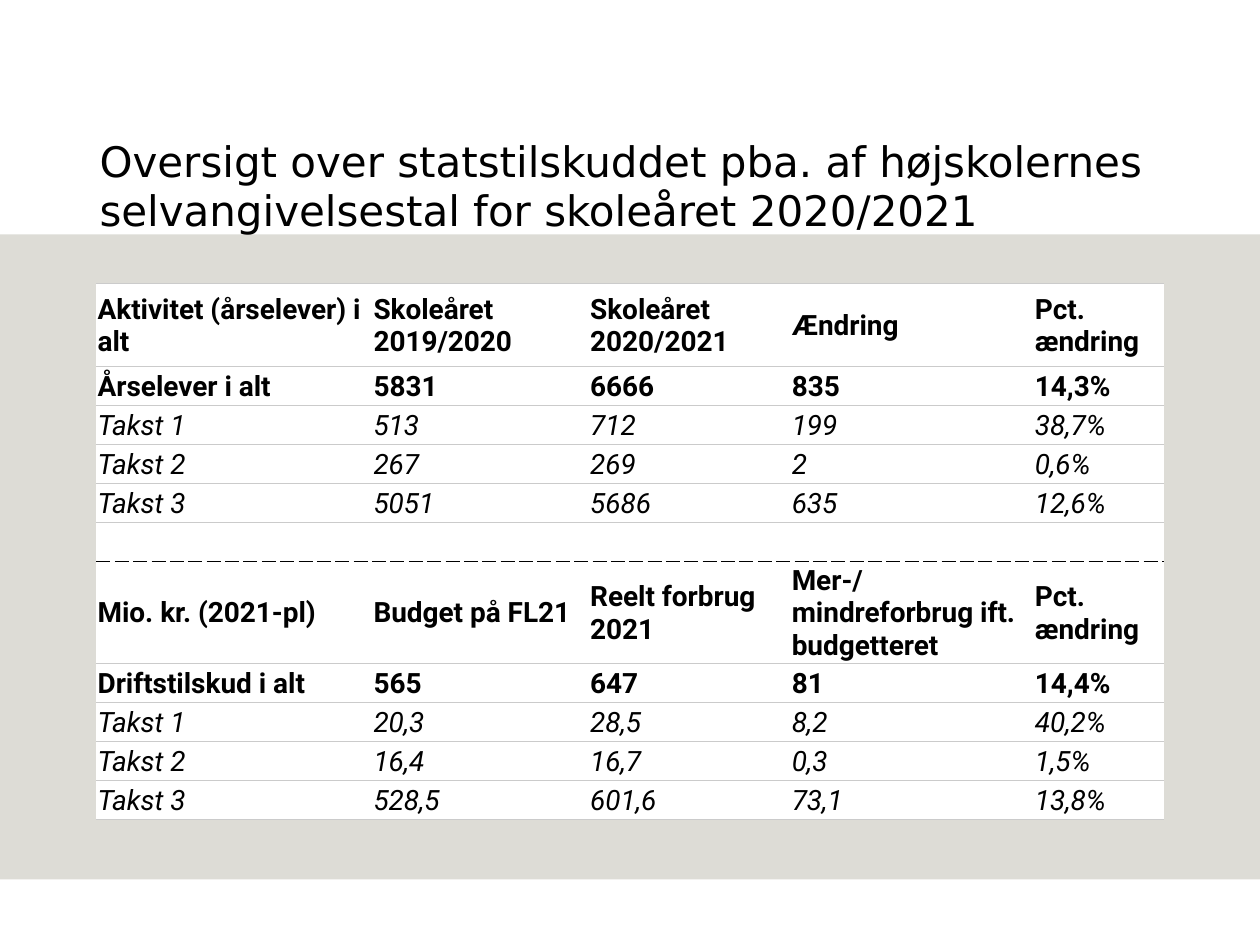
"""Build a slide with a table of state grants to folk high schools."""
from dataclasses import dataclass

from lxml import etree
from pptx import Presentation
from pptx import util as u
from pptx.dml.color import RGBColor
from pptx.enum import shapes, text
from pptx.oxml import ns

COLORS = {"ink": "000000", "paper": "FFFFFF", "band": "DDDCD6", "rule": "CBCBCB"}
WIDTH, HEIGHT = u.Inches(10), u.Inches(7.5)
COLUMN_PERCENTS = (21.9, 17.2, 16, 19.3, 10.3)
ROW_PERCENT = 4.13


@dataclass(frozen=True)
class Line:
    color: str
    points: float
    dash: str = "solid"


@dataclass(frozen=True)
class Row:
    labels: tuple[str, ...]
    bold: bool = False
    italic: bool = False
    percent: float = ROW_PERCENT
    top: Line = Line("rule", 0.5)
    bottom: Line = Line("rule", 0.5)


DIVIDER = Line("ink", 1, "sysDash")


def total(*labels: str) -> Row:
    return Row(labels, bold=True)


def rate(*labels: str) -> Row:
    return Row(labels, italic=True)


ROWS = (
    Row(("Aktivitet (årselever) i alt", "Skoleåret 2019/2020", "Skoleåret 2020/2021",
         "Ændring", "Pct. ændring"), bold=True, percent=8.8),
    total("Årselever i alt", "5831", "6666", "835", "14,3%"),
    rate("Takst 1", "513", "712", "199", "38,7%"),
    rate("Takst 2", "267", "269", "2", "0,6%"),
    rate("Takst 3", "5051", "5686", "635", "12,6%"),
    Row(("",) * len(COLUMN_PERCENTS), bottom=DIVIDER),
    Row(("Mio. kr. (2021-pl)", "Budget på FL21", "Reelt forbrug 2021",
         "Mer-/mindreforbrug ift. budgetteret", "Pct. ændring"),
        bold=True, percent=9.6, top=DIVIDER),
    total("Driftstilskud i alt", "565", "647", "81", "14,4%"),
    rate("Takst 1", "20,3", "28,5", "8,2", "40,2%"),
    rate("Takst 2", "16,4", "16,7", "0,3", "1,5%"),
    rate("Takst 3", "528,5", "601,6", "73,1", "13,8%"),
)


def across(percent: float) -> int:
    return round(WIDTH * percent / 100)


def down(percent: float) -> int:
    return round(HEIGHT * percent / 100)


def rgb(name: str) -> RGBColor:
    return RGBColor.from_string(COLORS[name])


def write(frame, content: str, *, font: str, size: float, bold: bool = False,
          italic: bool = False, spacing: float | None = None) -> None:
    frame.word_wrap = True
    para = frame.paragraphs[0]
    para.line_spacing = spacing
    para.font.size = u.Pt(size)
    if content:
        span = para.add_run()
        span.text = content
        span.font.name, span.font.size = font, u.Pt(size)
        span.font.bold, span.font.italic = bold, italic
        span.font.color.rgb = rgb("ink")


def add_border(properties, tag: str, line: Line) -> None:
    border = etree.SubElement(properties, ns.qn(f"a:{tag}"), w=str(u.Pt(line.points)))
    fill = etree.SubElement(border, ns.qn("a:solidFill"))
    etree.SubElement(fill, ns.qn("a:srgbClr"), val=COLORS[line.color])
    etree.SubElement(border, ns.qn("a:prstDash"), val=line.dash)


def format_cell(cell, label: str, row: Row) -> None:
    cell.margin_left = cell.margin_top = cell.margin_right = u.Inches(0.01)
    cell.margin_bottom = 0
    cell.vertical_anchor = text.MSO_ANCHOR.MIDDLE
    write(cell.text_frame, label, font="Roboto", size=16, bold=row.bold, italic=row.italic)
    properties = cell._tc.get_or_add_tcPr()
    for side in ("lnL", "lnR"):
        border = etree.SubElement(properties, ns.qn(f"a:{side}"), w="0")
        etree.SubElement(border, ns.qn("a:noFill"))
    add_border(properties, "lnT", row.top)
    add_border(properties, "lnB", row.bottom)
    cell.fill.solid()
    cell.fill.fore_color.rgb = rgb("paper")


def add_band(page) -> None:
    band = page.shapes.add_shape(shapes.MSO_SHAPE.RECTANGLE, 0, down(24.8), WIDTH, down(68.27))
    band.shadow.inherit = False
    band.fill.solid()
    band.fill.fore_color.rgb = rgb("band")
    band.line.fill.background()


def add_title(page, content: str) -> None:
    box = page.shapes.add_textbox(across(7.9), down(14.67), across(91.7), down(12.67))
    frame = box.text_frame
    frame.margin_left = frame.margin_top = frame.margin_right = frame.margin_bottom = 0
    write(frame, content, font="DejaVu Sans", size=24, spacing=0.97)


def add_grant_table(page, rows: tuple[Row, ...]) -> None:
    table = page.shapes.add_table(
        len(rows), len(COLUMN_PERCENTS), across(7.65), down(30),
        across(sum(COLUMN_PERCENTS)), down(sum(row.percent for row in rows))).table
    table.first_row = table.horz_banding = False
    for column, percent in zip(table.columns, COLUMN_PERCENTS):
        column.width = across(percent)
    for table_row, row in zip(table.rows, rows):
        table_row.height = down(row.percent)
        for cell, label in zip(table_row.cells, row.labels):
            format_cell(cell, label, row)


def main() -> None:
    deck = Presentation()
    deck.slide_width, deck.slide_height = WIDTH, HEIGHT
    page = deck.slides.add_slide(deck.slide_layouts[6])
    add_band(page)
    add_title(page, "Oversigt over statstilskuddet pba. af højskolernes "
                    "selvangivelsestal for skoleåret 2020/2021")
    add_grant_table(page, ROWS)
    deck.save("out.pptx")


if __name__ == "__main__":
    main()
